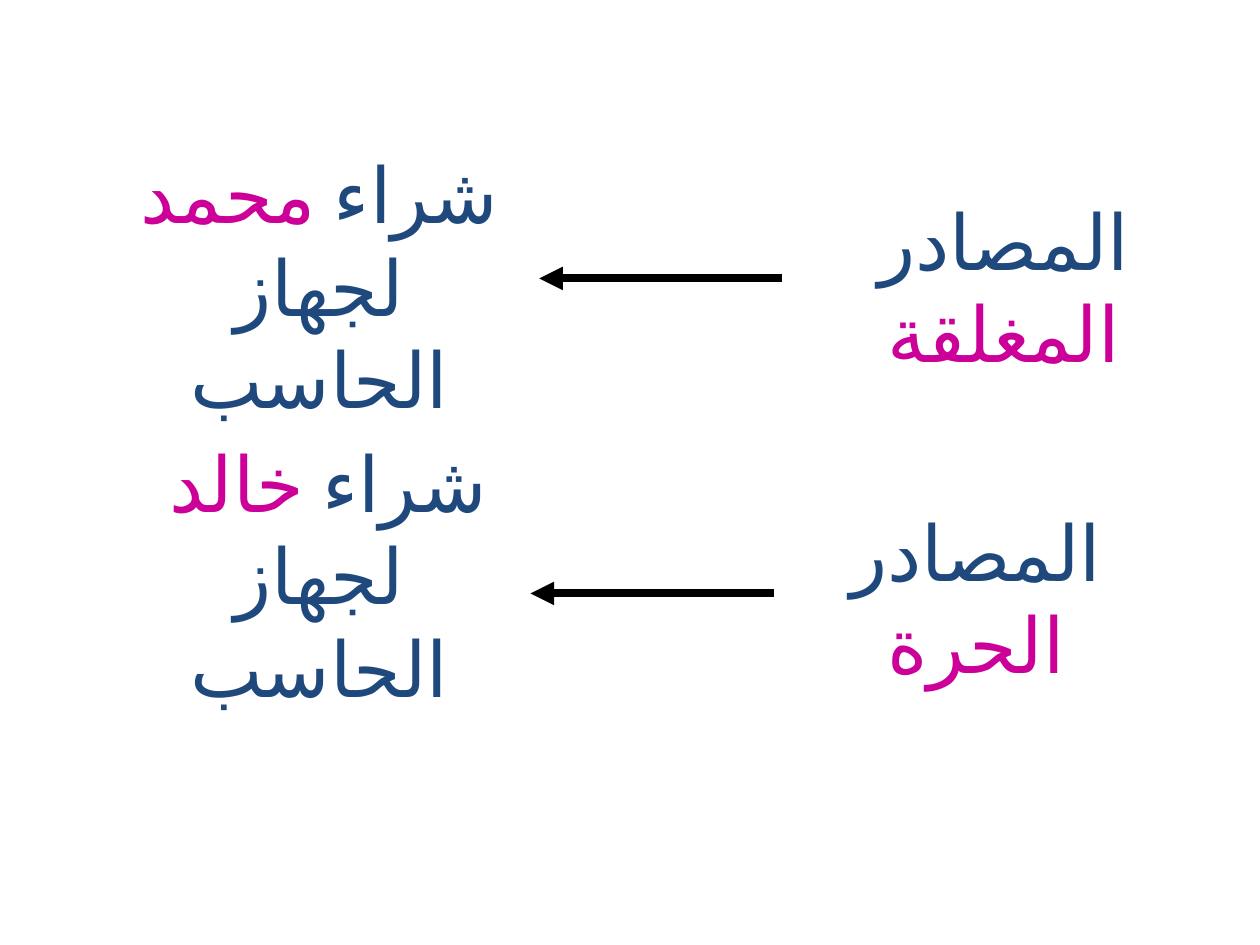
from pptx import Presentation
from pptx.dml.color import RGBColor
from pptx.enum.lang import MSO_LANGUAGE_ID
from pptx.enum.shapes import MSO_CONNECTOR
from pptx.enum.text import MSO_ANCHOR, PP_ALIGN
from pptx.oxml.ns import qn
from pptx.util import Inches, Pt
from lxml import etree

NAVY, PINK, BLACK = "1F497D", "CC0099", "000000"
FONT = "Calibri"
BOX_W, BOX_H = 3.21, 1.25
ARROW_W = 1.93


def color(hex_value):
    return RGBColor.from_string(hex_value)


prs = Presentation()
prs.slide_width, prs.slide_height = Inches(10), Inches(7.5)
s = prs.slides.add_slide(prs.slide_layouts[6])

# left, top, inset, runs; None stands for a line break
labels = [
    (6.36, 1.64, 0, [("المصادر ", NAVY), ("المغلقة", PINK)]),
    (0.93, 1.64, 0, [("شراء ", NAVY), ("محمد", PINK), (" لجهاز الحاسب", NAVY)]),
    (6.14, 4.11, 0.1, [("المصادر ", NAVY), ("الحرة", PINK)]),
    (0.93, 3.93, 0, [("شراء ", NAVY), ("خالد ", PINK), None, ("لجهاز الحاسب", NAVY)]),
]
run_format = {"size": Pt(44), "name": FONT, "language_id": MSO_LANGUAGE_ID.ARABIC}
for left, top, inset, runs in labels:
    sp = s.shapes.add_textbox(Inches(left), Inches(top), Inches(BOX_W), Inches(BOX_H))
    tf = sp.text_frame
    frame_format = {
        "word_wrap": True,
        "vertical_anchor": MSO_ANCHOR.MIDDLE,
        "margin_left": Inches(inset),
        "margin_right": Inches(inset),
        "margin_top": Inches(inset / 2),
        "margin_bottom": Inches(inset / 2),
    }
    for name, value in frame_format.items():
        setattr(tf, name, value)
    p = tf.paragraphs[0]
    p.alignment = PP_ALIGN.CENTER
    p._p.get_or_add_pPr().set("rtl", "1")
    for run in runs:
        if run is None:
            p.add_line_break()
            continue
        r = p.add_run()
        r.text, hex_value = run
        for name, value in run_format.items():
            setattr(r.font, name, value)
        r.font.color.rgb = color(hex_value)
        # Arabic takes the complex-script font
        etree.SubElement(r._r.rPr, qn("a:cs"), typeface=FONT)

for right, y in [(6.21, 2.21), (6.14, 4.71)]:
    arrow = s.shapes.add_connector(
        MSO_CONNECTOR.STRAIGHT, Inches(right), Inches(y), Inches(right - ARROW_W), Inches(y))
    arrow.line.width = Pt(4.5)
    arrow.line.color.rgb = color(BLACK)
    etree.SubElement(arrow.line._get_or_add_ln(), qn("a:tailEnd"), type="triangle")
    etree.SubElement(arrow._element.spPr, qn("a:effectLst"))

prs.save("out.pptx")
